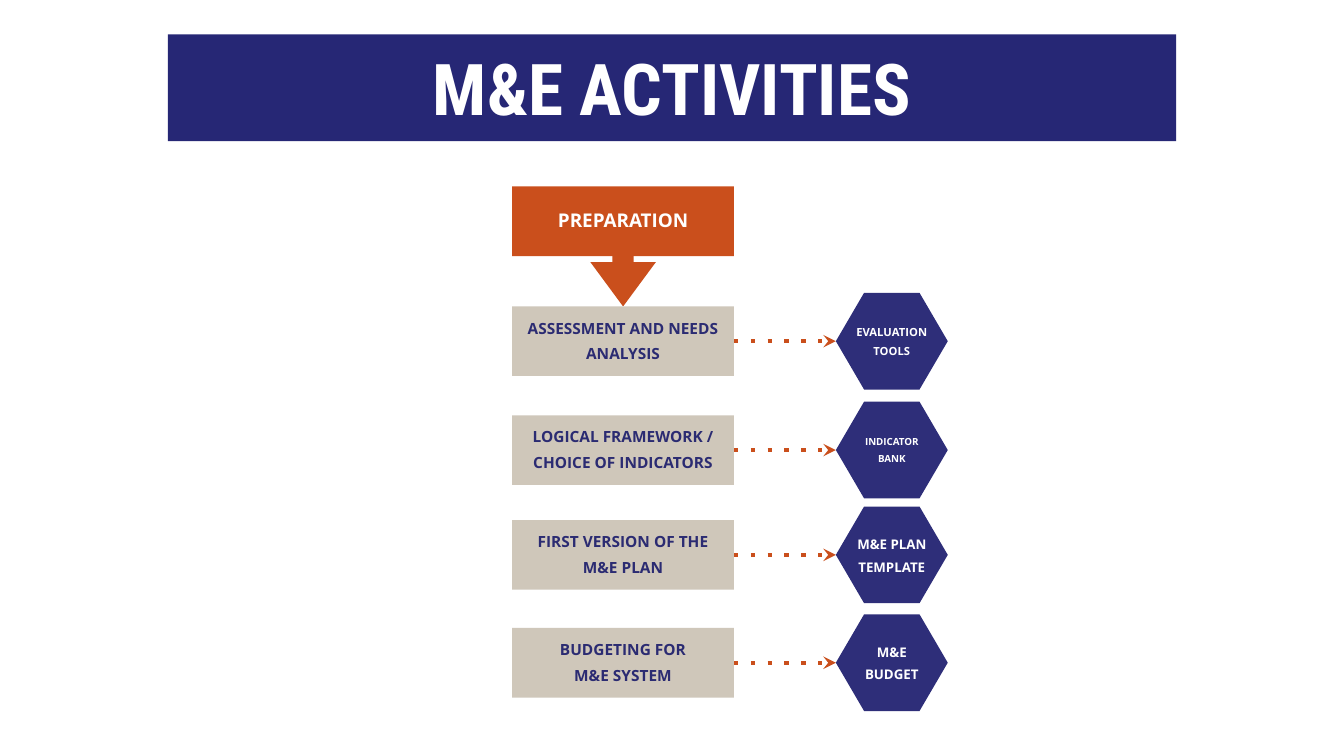
from lxml import etree
from pptx import Presentation
from pptx.dml.color import RGBColor
from pptx.enum.dml import MSO_LINE
from pptx.enum.shapes import MSO_CONNECTOR, MSO_SHAPE as Preset
from pptx.enum.text import MSO_ANCHOR as Anchor, MSO_AUTO_SIZE, PP_ALIGN
from pptx.oxml.ns import qn
from pptx.util import Inches, Pt

TITLE = "M&E ACTIVITIES"
PHASE = "PREPARATION"
# activity, its tool, tool text size, top of the activity box
ACTIVITIES = [
    ("ASSESSMENT AND NEEDS ANALYSIS", "EVALUATION TOOLS", 8, 3.04),
    ("LOGICAL FRAMEWORK / CHOICE OF INDICATORS", "INDICATOR BANK", 7, 4.12),
    ("FIRST VERSION OF THE\nM&E PLAN", "M&E PLAN TEMPLATE", 9.5, 5.16),
    ("BUDGETING FOR\nM&E SYSTEM", "M&E BUDGET", 9.5, 6.23),
]
NAVY, INDIGO, INK = "262775", "2E2E79", "2B2B72"
ORANGE, SAND, WHITE = "CA4F1C", "CFC7BA", "FFFFFF"

SLIDE_W, SLIDE_H = 13.33, 7.5
BANNER_W, BANNER_H, BANNER_TOP = 10, 1.06, 0.34
BOX_LEFT, BOX_W, BOX_H = 5.08, 2.2, 0.69
PHASE_TOP = 1.85
ARROW_W, ARROW_TOP, HEAD_H, SHAFT_W = 0.65, 1.89, 0.44, 0.21
HEX_LEFT, HEX_W, HEX_H, HEX_POINT = 8.29, 1.11, 0.96, 0.28


def color(value):
    return RGBColor.from_string(value)


def write(shape, text, font, size, ink, margins, spacing=None, anchor=Anchor.MIDDLE):
    """Set centred bold text; margins are left/right, top and bottom in inches."""
    frame = shape.text_frame
    frame.text = text
    frame.word_wrap = True
    frame.auto_size = MSO_AUTO_SIZE.NONE
    frame.vertical_anchor = anchor
    side, top, bottom = (Inches(margin) for margin in margins)
    frame.margin_left = frame.margin_right = side
    frame.margin_top, frame.margin_bottom = top, bottom
    for paragraph in frame.paragraphs:
        paragraph.alignment = PP_ALIGN.CENTER
        paragraph.line_spacing = spacing
        for run in paragraph.runs:
            run.font.name, run.font.size, run.font.bold = font, Pt(size), True
            run.font.color.rgb = color(ink)


def add_block(slide, preset, left, top, width, height, fill):
    block = slide.shapes.add_shape(preset, *map(Inches, (left, top, width, height)))
    block.shadow.inherit = False
    block.fill.solid()
    block.fill.fore_color.rgb = color(fill)
    block.line.fill.background()
    return block


def add_dotted_arrow(slide, activity_box, tool_left, y):
    arrow = slide.shapes.add_connector(
        MSO_CONNECTOR.STRAIGHT, Inches(BOX_LEFT + BOX_W), Inches(y), Inches(tool_left), Inches(y))
    arrow.begin_connect(activity_box, 3)
    arrow.line.color.rgb = color(ORANGE)
    arrow.line.width = Pt(3)
    arrow.line.dash_style = MSO_LINE.ROUND_DOT
    line = arrow.line._get_or_add_ln()
    line.find(qn("a:prstDash")).set("val", "dot")
    etree.SubElement(line, qn("a:tailEnd"), type="stealth")
    etree.SubElement(arrow._element.spPr, qn("a:effectLst"))


def add_title(slide):
    title = slide.shapes.title
    title.left, title.top = Inches((SLIDE_W - BANNER_W) / 2), Inches(BANNER_TOP)
    title.width, title.height = Inches(BANNER_W), Inches(BANNER_H)
    title.fill.solid()
    title.fill.fore_color.rgb = color(NAVY)
    write(title, TITLE, "Roboto Condensed", 51, WHITE, (0.1, 0.1, 0.1), anchor=Anchor.TOP)


def add_phase(slide):
    arrow = add_block(slide, Preset.DOWN_ARROW, BOX_LEFT + (BOX_W - ARROW_W) / 2, ARROW_TOP,
                      ARROW_W, ACTIVITIES[0][3] - ARROW_TOP, ORANGE)
    arrow.adjustments[0] = SHAFT_W / ARROW_W
    arrow.adjustments[1] = HEAD_H / ARROW_W
    phase = add_block(slide, Preset.RECTANGLE, BOX_LEFT, PHASE_TOP, BOX_W, BOX_H, ORANGE)
    write(phase, PHASE, "Open Sans", 13.5, WHITE, (0.03, 0.03, 0.15), 1.4)


def add_activity(slide, activity, tool, tool_size, top):
    middle = top + BOX_H / 2
    box = add_block(slide, Preset.RECTANGLE, BOX_LEFT, top, BOX_W, BOX_H, SAND)
    write(box, activity, "Open Sans", 11, INK, (0.03, 0.03, 0.11), 1.4)
    hexagon = add_block(slide, Preset.HEXAGON, HEX_LEFT, middle - HEX_H / 2, HEX_W, HEX_H, INDIGO)
    hexagon.adjustments[0] = HEX_POINT / HEX_H
    write(hexagon, tool, "Open Sans", tool_size, WHITE, (0, 0, 0.05), 1.4)
    add_dotted_arrow(slide, box, HEX_LEFT, middle)


def main():
    deck = Presentation()
    deck.slide_width, deck.slide_height = Inches(SLIDE_W), Inches(SLIDE_H)
    slide = deck.slides.add_slide(deck.slide_layouts[5])
    add_title(slide)
    add_phase(slide)
    for row in ACTIVITIES:
        add_activity(slide, *row)
    deck.save("out.pptx")


if __name__ == "__main__":
    main()
